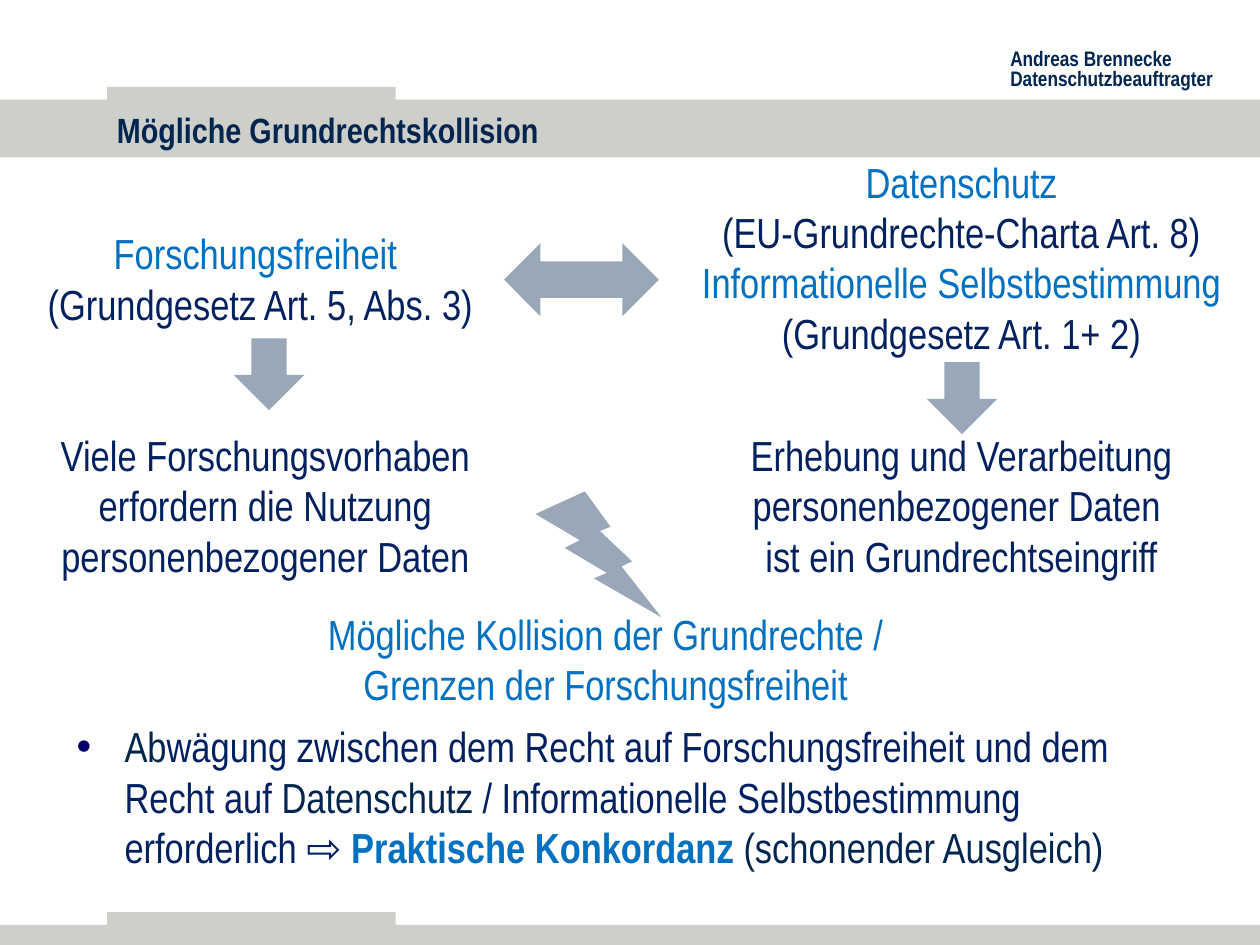
from dataclasses import dataclass
from typing import NamedTuple

from lxml import etree
from pptx import Presentation
from pptx.dml.color import RGBColor
from pptx.enum.shapes import MSO_SHAPE
from pptx.enum.text import MSO_ANCHOR, PP_ALIGN
from pptx.oxml.ns import qn
from pptx.util import Inches, Pt

RECT = MSO_SHAPE.RECTANGLE
RIGHT = MSO_SHAPE.RIGHT_ARROW
DOUBLE = MSO_SHAPE.LEFT_RIGHT_ARROW
BOLT = MSO_SHAPE.LIGHTNING_BOLT
TOP, MIDDLE = MSO_ANCHOR.TOP, MSO_ANCHOR.MIDDLE
LEFT, CENTER = PP_ALIGN.LEFT, PP_ALIGN.CENTER


@dataclass(frozen=True)
class Theme:
    font: str = "Arial Narrow"
    navy: str = "00254F"
    ink: str = "002060"
    blue: str = "0070C0"
    gray: str = "CECFCB"
    bullet: str = "000066"
    small: int = 12
    head: int = 20
    body: int = 24
    alpha: int = 40


THEME = Theme()


class Box(NamedTuple):
    left: float
    top: float
    width: float
    height: float


class Run(NamedTuple):
    text: str
    color: str
    bold: bool = False


class Note(NamedTuple):
    box: Box
    paras: list[list[Run]]
    size: int = THEME.body
    align: PP_ALIGN = CENTER
    anchor: MSO_ANCHOR = TOP
    wrap: bool = True
    space: float = 1.0


class Mark(NamedTuple):
    kind: MSO_SHAPE
    box: Box
    color: str = THEME.navy
    alpha: int = THEME.alpha
    turn: int = 0


BARS = [
    Mark(RECT, Box(left, top, width, height), THEME.gray, 100)
    for left, top, width, height in [
        (0, 0.79, 10, 0.46), (0, 7.34, 10, 0.16),
        (0.85, 0.69, 2.29, 0.13), (0.85, 7.24, 2.29, 0.13),
    ]
]
SIGNS = [
    Mark(DOUBLE, Box(4, 1.93, 1.23, 0.58)),
    Mark(RIGHT, Box(1.85, 2.69, 0.57, 0.56), turn=90),
    Mark(RIGHT, Box(7.35, 2.88, 0.57, 0.56), turn=90),
    Mark(BOLT, Box(4.25, 3.9, 1, 1)),
]
AUTHOR = Note(
    Box(7.92, 0.35, 1.83, 0.42),
    [[Run("Andreas Brennecke\nDatenschutzbeauftragter", THEME.navy, True)]],
    THEME.small, LEFT, wrap=False, space=0.8,
)
TITLE = Note(
    Box(0.83, 0.82, 8.7, 0.42),
    [[Run("Mögliche Grundrechtskollision", THEME.navy, True)]],
    THEME.head, LEFT, MIDDLE,
)
RESULT = Note(
    Box(0.51, 5.67, 9.08, 1.48),
    [[
        Run("Ab", THEME.navy),
        Run("wägung zwischen dem Recht auf Forschungsfreiheit und dem Recht auf ",
            THEME.ink),
        Run("Datenschutz ", THEME.navy),
        Run("/ Informationelle Selbstbestimmung erforderlich ⇨ ", THEME.ink),
        Run("Praktische Konkordanz ", THEME.blue, True),
        Run("(schonender Ausgleich)", THEME.navy),
    ]],
    align=LEFT,
)
CLAIMS = [
    Note(Box(5.43, 1.19, 4.4, 1.72), [
        [Run("Datenschutz", THEME.blue)],
        [Run("(", THEME.navy), Run("EU-Grundrechte-Charta Art. 8)", THEME.ink)],
        [Run("Informationelle Selbstbestimmung ", THEME.blue),
         Run("(Grundgesetz Art. 1+ 2)", THEME.ink)],
    ]),
    Note(Box(0.13, 1.76, 3.87, 0.91), [
        [Run("Forschungsfreiheit \n", THEME.blue),
         Run("(Grundgesetz Art. 5, Abs. 3)", THEME.ink)],
    ]),
    Note(Box(0.13, 3.36, 3.95, 1.31), [
        [Run("Viele Forschungsvorhaben erfordern die Nutzung "
             "personenbezogener Daten", THEME.ink)],
    ]),
    Note(Box(5.43, 3.36, 4.4, 1.31), [
        [Run("Erhebung und Verarbeitung personenbezogener Daten \n"
             "ist ein Grundrechtseingriff", THEME.ink)],
    ]),
    Note(Box(2.41, 4.78, 4.79, 0.91), [
        [Run("Mögliche Kollision der Grundrechte / "
             "Grenzen der Forschungsfreiheit", THEME.blue)],
    ]),
]


def add_mark(slide, mark: Mark) -> None:
    shape = slide.shapes.add_shape(mark.kind, *map(Inches, mark.box))
    shape.shadow.inherit = False
    shape.rotation = mark.turn
    shape.line.fill.background()
    shape.fill.solid()
    shape.fill.fore_color.rgb = RGBColor.from_string(mark.color)
    if mark.alpha < 100:
        tint = shape.fill._xPr.find(f".//{qn('a:srgbClr')}")
        etree.SubElement(tint, qn("a:alpha"), val=str(mark.alpha * 1000))


def add_run(para, run: Run, size: int) -> None:
    """Add a run, with a line break at each newline."""
    for i, text in enumerate(run.text.split("\n")):
        if i:
            para.add_line_break()
        if text:
            part = para.add_run()
            part.text = text
            font = part.font
            font.name, font.size, font.bold = THEME.font, Pt(size), run.bold
            font.color.rgb = RGBColor.from_string(run.color)


def add_note(slide, note: Note):
    frame = slide.shapes.add_textbox(*map(Inches, note.box)).text_frame
    frame.word_wrap = note.wrap
    frame.vertical_anchor = note.anchor
    for i, runs in enumerate(note.paras):
        para = frame.add_paragraph() if i else frame.paragraphs[0]
        para.alignment = note.align
        para.line_spacing = note.space
        for run in runs:
            add_run(para, run, note.size)
    return frame


def add_bullet(para, indent: float) -> None:
    props = para._p.get_or_add_pPr()
    props.set("marL", str(Inches(indent)))
    props.set("indent", str(-Inches(indent)))
    color = etree.SubElement(props, qn("a:buClr"))
    etree.SubElement(color, qn("a:srgbClr"), val=THEME.bullet)
    etree.SubElement(props, qn("a:buFont"), typeface="Arial")
    etree.SubElement(props, qn("a:buChar"), char="•")


def main() -> None:
    deck = Presentation()
    deck.slide_width, deck.slide_height = Inches(10), Inches(7.5)
    slide = deck.slides.add_slide(deck.slide_layouts[6])
    for bar in BARS:
        add_mark(slide, bar)
    for note in (AUTHOR, TITLE):
        add_note(slide, note)
    add_bullet(add_note(slide, RESULT).paragraphs[0], 0.38)
    for claim in CLAIMS:
        add_note(slide, claim)
    for sign in SIGNS:
        add_mark(slide, sign)
    deck.save("out.pptx")


if __name__ == "__main__":
    main()
